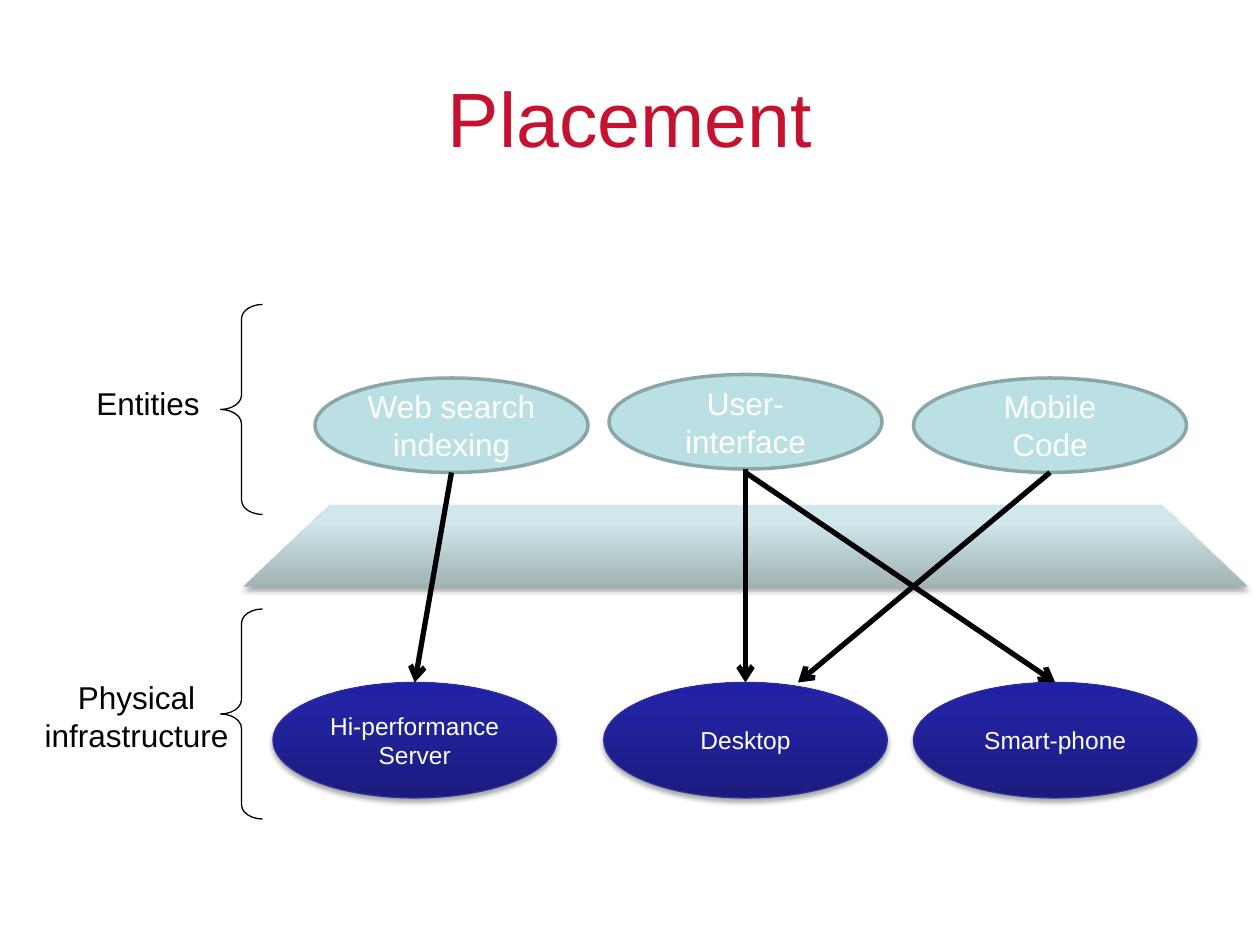
from copy import deepcopy

from lxml.etree import SubElement
from pptx import Presentation
from pptx.dml.color import RGBColor
from pptx.enum.shapes import MSO_CONNECTOR, MSO_SHAPE
from pptx.enum.text import MSO_ANCHOR, PP_ALIGN
from pptx.oxml.ns import qn
from pptx.util import Pt

FONT = "Arial"
RED = RGBColor(0xC4, 0x12, 0x30)
BLACK = RGBColor(0, 0, 0)
WHITE = RGBColor(0xFF, 0xFF, 0xFF)
ENTITY_FILL = RGBColor(0xBB, 0xE0, 0xE3)
ENTITY_LINE = RGBColor(0x8A, 0xA6, 0xA8)
DEVICE_LINE = RGBColor(0x2F, 0x2F, 0x98)
# Gradient colours from bottom to top
DEVICE_COLORS = (RGBColor(0x1B, 0x1B, 0x7E), RGBColor(0x23, 0x23, 0xA3), RGBColor(0x20, 0x20, 0xA6))
LAYER_COLORS = (RGBColor(0xA0, 0xB3, 0xB5), RGBColor(0xD0, 0xE8, 0xEB), RGBColor(0xD1, 0xEA, 0xEC))
GRADIENT_POSITIONS = (0, 0.8, 1)


def write_text(shape, text, size, color, alignment=PP_ALIGN.CENTER):
    text_frame = shape.text_frame
    text_frame.word_wrap = True
    text_frame.text = text
    paragraph = text_frame.paragraphs[0]
    paragraph.alignment = alignment
    font = paragraph.runs[0].font
    font.name, font.size, font.color.rgb = FONT, Pt(size), color


def add_shape(slide, kind, left, top, width, height):
    shape = slide.shapes.add_shape(kind, Pt(left), Pt(top), Pt(width), Pt(height))
    shape.shadow.inherit = False
    return shape


def set_line(shape, color, width):
    shape.line.color.rgb = color
    shape.line.width = Pt(width)


def fill_gradient(shape, colors):
    shape.fill.gradient()
    shape.fill.gradient_angle = 90
    stop_list = shape._element.spPr.find(qn("a:gradFill")).find(qn("a:gsLst"))
    stop_list.append(deepcopy(stop_list[-1]))
    for stop, position, color in zip(shape.fill.gradient_stops, GRADIENT_POSITIONS, colors):
        stop.position = position
        stop.color.rgb = color


def add_shadow(shape):
    effects = shape._element.spPr.find(qn("a:effectLst"))
    shadow = SubElement(effects, qn("a:outerShdw"), blurRad=str(Pt(3.1)),
                        dist=str(Pt(1.8)), dir="5400000", rotWithShape="0")
    color = SubElement(shadow, qn("a:srgbClr"), val="000000")
    SubElement(color, qn("a:alpha"), val="35000")


def add_layer(slide):
    layer = add_shape(slide, MSO_SHAPE.TRAPEZOID, 139, 288.75, 574, 46.5)
    layer.adjustments[0] = 1.07
    fill_gradient(layer, LAYER_COLORS)
    layer.line.fill.background()
    add_shadow(layer)


def add_device(slide, text, left):
    device = add_shape(slide, MSO_SHAPE.OVAL, left, 390, 162, 66)
    fill_gradient(device, DEVICE_COLORS)
    set_line(device, DEVICE_LINE, 0.75)
    add_shadow(device)
    write_text(device, text, 14, WHITE)
    return device


def add_entity(slide, text, left, top):
    entity = add_shape(slide, MSO_SHAPE.OVAL, left, top, 156, 54)
    entity.fill.solid()
    entity.fill.fore_color.rgb = ENTITY_FILL
    set_line(entity, ENTITY_LINE, 2)
    write_text(entity, text, 18, WHITE)


def add_arrow(slide, start, end, device=None):
    """Draw an arrow, joined to the top of a device when one is given."""
    arrow = slide.shapes.add_connector(MSO_CONNECTOR.STRAIGHT, *map(Pt, start + end))
    set_line(arrow, BLACK, 3)
    if device is not None:
        arrow.end_connect(device, 0)
    SubElement(arrow.line._get_or_add_ln(), qn("a:tailEnd"), type="arrow")
    SubElement(arrow._element.spPr, qn("a:effectLst"))


def add_brace(slide, top):
    brace = add_shape(slide, MSO_SHAPE.LEFT_BRACE, 126, top, 24, 120)
    brace.adjustments[0] = 0.34
    brace.fill.background()
    set_line(brace, BLACK, 0.75)


def add_label(slide, text, left, top, width, height, alignment):
    label = slide.shapes.add_textbox(Pt(left), Pt(top), Pt(width), Pt(height))
    write_text(label, text, 18, BLACK, alignment)


def add_title(slide, text):
    title = slide.shapes.title
    title.left, title.top, title.width, title.height = Pt(36), Pt(21.6), Pt(648), Pt(90)
    title.text_frame.vertical_anchor = MSO_ANCHOR.MIDDLE
    write_text(title, text, 44, RED)


def main():
    presentation = Presentation()
    presentation.slide_width, presentation.slide_height = Pt(720), Pt(540)
    slide = presentation.slides.add_slide(presentation.slide_layouts[5])

    add_title(slide, "Placement")
    add_layer(slide)

    # Physical devices and the entities placed on them
    server = add_device(slide, "Hi-performance Server", 156)
    desktop = add_device(slide, "Desktop", 345)
    phone = add_device(slide, "Smart-phone", 522)
    add_entity(slide, "User-interface", 348, 214)
    add_entity(slide, "Web search indexing", 180, 216)
    add_entity(slide, "Mobile Code", 522, 216)

    # Placement arrows
    add_arrow(slide, (258, 270), (237, 390), server)
    add_arrow(slide, (426, 268), (426, 390), desktop)
    add_arrow(slide, (426, 270), (603, 390), phone)
    add_arrow(slide, (600, 270), (456, 390))

    # Group braces and labels
    for top in (174, 348):
        add_brace(slide, top)
    add_label(slide, "Entities", 48, 216, 78, 29, PP_ALIGN.LEFT)
    add_label(slide, "Physical infrastructure", 18, 384, 120, 51, PP_ALIGN.CENTER)

    presentation.save("out.pptx")


if __name__ == "__main__":
    main()
